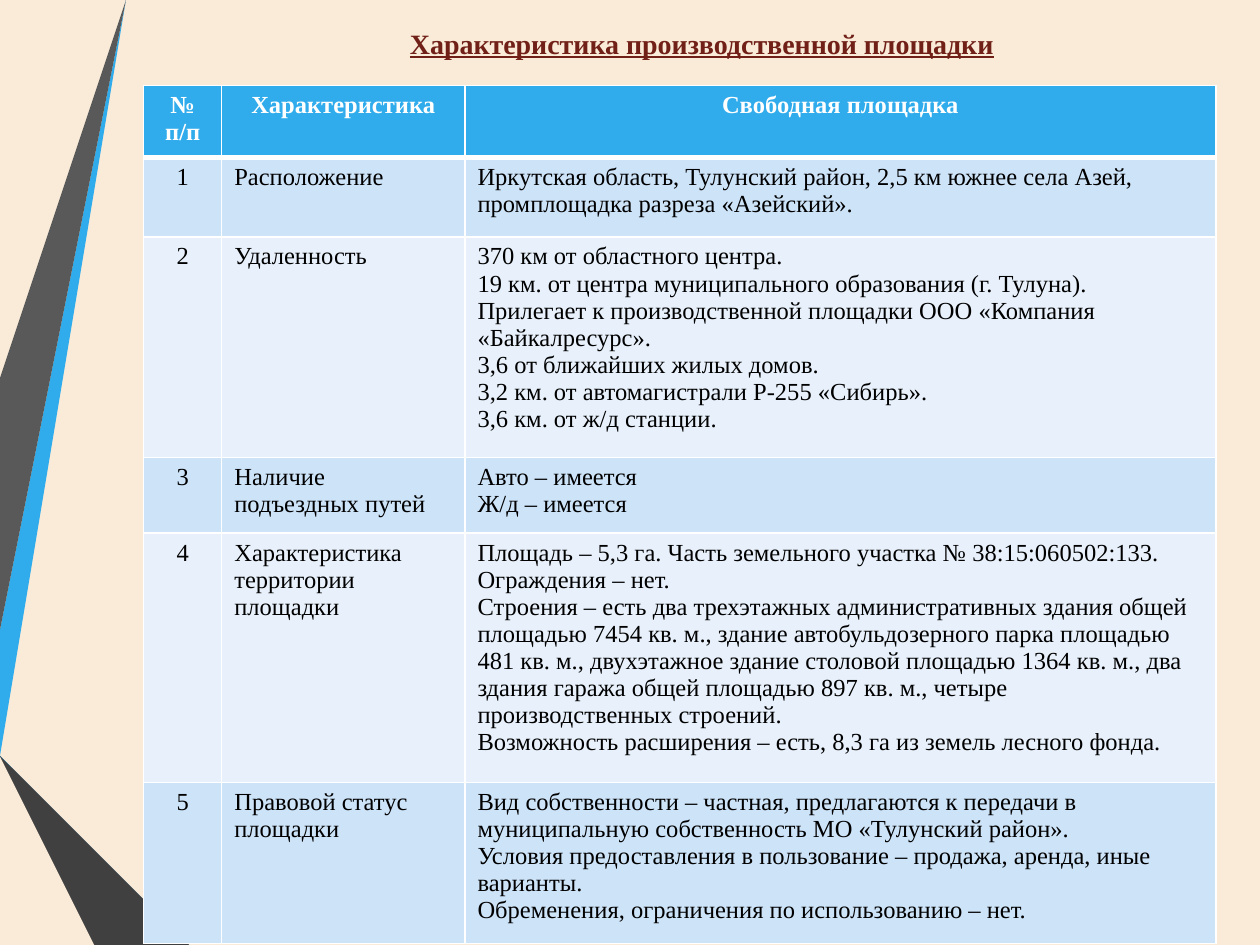
from lxml import etree
from pptx import Presentation
from pptx import util as u
from pptx.dml.color import RGBColor
from pptx.enum import text
from pptx.oxml import ns

COLORS = {
    "background": "F9EBD8", "title": "712018", "header": "30ACEC",
    "odd": "CDE3F8", "even": "E8F1FB", "white": "FFFFFF", "ink": "000000",
    "blue": "30ACEC", "gray": "595959", "black": "262626",
    "navy": "0C5A82", "deep_blue": "1287C3", "dark_gray": "404040",
}
FONT = "Times New Roman"
RIBBONS = [
    ("blue", [(0, 5.44), (0, 5.75), (0.22, 5.79), (1.17, 0), (0.89, 0)]),
    ("gray", [(0.83, 0), (0.55, 0), (0, 3.36), (0, 5.06)]),
    ("black", [(0, 6.19), (0, 6.21), (0.93, 7.5), (0.99, 7.5)]),
    ("navy", [(0, 5.79), (0, 5.8), (1.56, 7.5), (1.63, 7.5)]),
    ("deep_blue", [(0, 5.79), (1.63, 7.5), (2.33, 7.5), (0.22, 5.79), (0, 5.75)]),
    ("dark_gray", [(0, 6.19), (0.99, 7.5), (1.51, 7.5), (0, 5.86)]),
]
COLUMN_WIDTHS = [0.62, 1.93, 5.96]
ROW_HEIGHTS = [0.57, 0.63, 1.75, 0.6, 1.98, 1.28]
HEADINGS = ["№ п/п", "Характеристика", "Свободная площадка"]
FEATURES = [
    ("Расположение", [
        "Иркутская область, Тулунский район, 2,5 км южнее села Азей, "
        "промплощадка разреза «Азейский».",
    ]),
    ("Удаленность", [
        "370 км от областного центра.",
        "19 км. от центра муниципального образования (г. Тулуна).",
        "Прилегает к производственной площадки ООО «Компания «Байкалресурс».",
        "3,6 от ближайших жилых домов.",
        "3,2 км. от автомагистрали Р-255 «Сибирь».",
        "3,6 км. от ж/д станции.",
    ]),
    ("Наличие подъездных путей", ["Авто – имеется", "Ж/д – имеется"]),
    ("Характеристика территории площадки", [
        "Площадь – 5,3 га. Часть земельного участка № 38:15:060502:133.",
        "Ограждения – нет.",
        "Строения – есть два трехэтажных административных здания общей "
        "площадью 7454 кв. м., здание автобульдозерного парка площадью "
        "481 кв. м., двухэтажное здание столовой площадью 1364 кв. м., два "
        "здания гаража общей площадью 897 кв. м., четыре "
        "производственных строений.",
        "Возможность расширения – есть, 8,3 га из земель лесного фонда.",
    ]),
    ("Правовой статус площадки", [
        "Вид собственности – частная, предлагаются к передачи в "
        "муниципальную собственность МО «Тулунский район».",
        "Условия предоставления в пользование – продажа, аренда, иные варианты.",
        "Обременения, ограничения по использованию – нет.",
    ]),
]


def rgb(name):
    return RGBColor.from_string(COLORS[name])


def write(frame, lines, size, color, bold=False, underline=False, centered=False):
    for index, line in enumerate(lines):
        paragraph = frame.paragraphs[0] if index == 0 else frame.add_paragraph()
        paragraph.alignment = text.PP_ALIGN.CENTER if centered else text.PP_ALIGN.LEFT
        run = paragraph.add_run()
        run.text = line
        run.font.name = FONT
        run.font.size = u.Pt(size)
        run.font.bold = bold
        run.font.underline = underline
        run.font.color.rgb = rgb(color)


def add_ribbons(slide, left, top):
    for color, points in RIBBONS:
        corners = [(left + x, top + y) for x, y in points]
        builder = slide.shapes.build_freeform(*corners[0], scale=u.Inches(1))
        builder.add_line_segments(corners[1:], close=True)
        ribbon = builder.convert_to_shape()
        ribbon.shadow.inherit = False
        ribbon.fill.solid()
        ribbon.fill.fore_color.rgb = rgb(color)
        ribbon.line.fill.background()


def add_title(slide, left, top, width, height):
    title = slide.shapes.title
    title.left, title.top = u.Inches(left), u.Inches(top)
    title.width, title.height = u.Inches(width), u.Inches(height)
    frame = title.text_frame
    frame.auto_size = text.MSO_AUTO_SIZE.NONE
    frame.vertical_anchor = text.MSO_ANCHOR.MIDDLE
    write(frame, ["Характеристика производственной площадки"], 16, "title",
          bold=True, underline=True, centered=True)


def draw_borders(cell, top, bottom):
    properties = cell._tc.get_or_add_tcPr()
    for side, points in (("L", 1), ("R", 1), ("T", top), ("B", bottom)):
        line = etree.SubElement(properties, ns.qn(f"a:ln{side}"), w=str(u.Pt(points)))
        fill = etree.SubElement(line, ns.qn("a:solidFill"))
        etree.SubElement(fill, ns.qn("a:srgbClr"), val=COLORS["white"])


def add_features(slide, left, top, width, height):
    rows = [[[heading] for heading in HEADINGS]]
    rows += [[[str(number)], [name], details]
             for number, (name, details) in enumerate(FEATURES, 1)]
    table = slide.shapes.add_table(
        len(rows), len(HEADINGS),
        u.Inches(left), u.Inches(top), u.Inches(width), u.Inches(height)).table
    for column, column_width in zip(table.columns, COLUMN_WIDTHS):
        column.width = u.Inches(column_width)
    for row, row_height in zip(table.rows, ROW_HEIGHTS):
        row.height = u.Inches(row_height)
    for r, row in enumerate(rows):
        header = r == 0
        band = "header" if header else ("odd" if r % 2 else "even")
        for c, lines in enumerate(row):
            cell = table.cell(r, c)
            draw_borders(cell, top=3 if r == 1 else 1, bottom=3 if header else 1)
            cell.fill.solid()
            cell.fill.fore_color.rgb = rgb(band)
            write(cell.text_frame, lines, 14, "white" if header else "ink",
                  bold=header, centered=header or c == 0)


def main():
    deck = Presentation()
    deck.slide_width, deck.slide_height = u.Inches(10), u.Inches(7.5)
    slide = deck.slides.add_slide(deck.slide_layouts[5])
    slide.background.fill.solid()
    slide.background.fill.fore_color.rgb = rgb("background")
    add_ribbons(slide, 0, 0)
    add_features(slide, 1.14, 0.68, sum(COLUMN_WIDTHS), sum(ROW_HEIGHTS))
    add_title(slide, 1.14, 0, 8.86, 0.68)
    deck.save("out.pptx")


if __name__ == "__main__":
    main()
